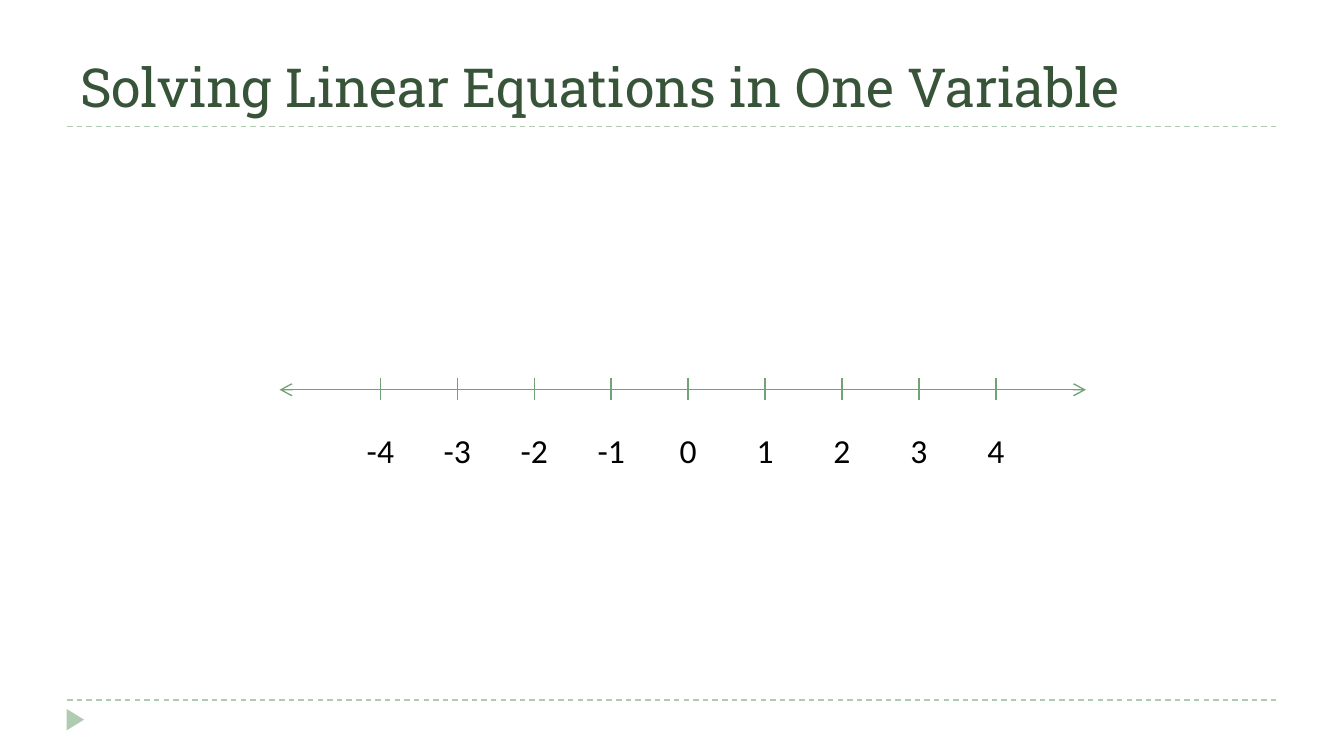
import dataclasses

import lxml.etree
import pptx
import pptx.dml.color
import pptx.enum.dml
import pptx.enum.shapes
import pptx.enum.text
import pptx.oxml.ns
import pptx.slide
import pptx.util

Inches = pptx.util.Inches
ALIGN = pptx.enum.text.PP_ALIGN
ANCHOR = pptx.enum.text.MSO_ANCHOR

COLORS = {"background": "FFFFFF", "rule": "B0CCB0", "title": "375439",
          "axis": "72A376", "label": "000000"}


@dataclasses.dataclass(frozen=True)
class Line:
    start: tuple[float, float]
    end: tuple[float, float]
    color: str
    dashed: bool = False
    arrows: bool = False


@dataclasses.dataclass(frozen=True)
class Label:
    text: str
    box: tuple[float, float, float, float]
    font: str
    size: float
    color: str
    align: ALIGN = ALIGN.CENTER
    anchor: ANCHOR = ANCHOR.TOP


def rgb(name: str) -> pptx.dml.color.RGBColor:
    return pptx.dml.color.RGBColor.from_string(COLORS[name])


def draw_line(slide: pptx.slide.Slide, line: Line) -> None:
    connector = slide.shapes.add_connector(
        pptx.enum.shapes.MSO_CONNECTOR.STRAIGHT,
        *(Inches(value) for value in line.start + line.end))
    connector.line.color.rgb = rgb(line.color)
    connector.line.width = pptx.util.Pt(0.75)
    if line.dashed:
        connector.line.dash_style = pptx.enum.dml.MSO_LINE.DASH
    qn = pptx.oxml.ns.qn
    properties = connector._element.spPr
    if line.arrows:
        for end in ("a:headEnd", "a:tailEnd"):
            lxml.etree.SubElement(properties.find(qn("a:ln")), qn(end), type="arrow")
    lxml.etree.SubElement(properties, qn("a:effectLst"))


def draw_label(slide: pptx.slide.Slide, label: Label) -> None:
    frame = slide.shapes.add_textbox(*(Inches(value) for value in label.box)).text_frame
    frame.word_wrap = True
    frame.vertical_anchor = label.anchor
    paragraph = frame.paragraphs[0]
    paragraph.alignment = label.align
    run = paragraph.add_run()
    run.text = label.text
    run.font.name = label.font
    run.font.size = pptx.util.Pt(label.size)
    run.font.color.rgb = rgb(label.color)


def draw_marker(slide: pptx.slide.Slide) -> None:
    marker = slide.shapes.add_shape(
        pptx.enum.shapes.MSO_SHAPE.ISOSCELES_TRIANGLE,
        Inches(0.48), Inches(5.29), Inches(0.16), Inches(0.13))
    marker.rotation = 90
    marker.shadow.inherit = False
    marker.fill.solid()
    marker.fill.fore_color.rgb = rgb("rule")
    marker.line.fill.background()


def draw_number_line(slide: pptx.slide.Slide) -> None:
    first, last = 2.83, 7.41
    numbers = range(-4, 5)
    step = (last - first) / (len(numbers) - 1)
    draw_line(slide, Line((2.08, 2.9), (8.08, 2.9), "axis", arrows=True))
    for index, number in enumerate(numbers):
        x = first + index * step
        draw_line(slide, Line((x, 2.81), (x, 2.98), "axis"))
        width = 0.42 if number < 0 else 0.33
        draw_label(slide, Label(str(number), (x - width / 2, 3.15, width, 0.4),
                                "Calibri", 18, "label"))


def main() -> None:
    presentation = pptx.Presentation()
    presentation.slide_width = Inches(10)
    presentation.slide_height = Inches(10 * 9 / 16)
    slide = presentation.slides.add_slide(presentation.slide_layouts[6])
    slide.background.fill.solid()
    slide.background.fill.fore_color.rgb = rgb("background")
    for y in (5.21, 0.94):
        draw_line(slide, Line((0.5, y), (9.5, y), "rule", dashed=True))
    draw_marker(slide)
    draw_label(slide, Label("Solving Linear Equations in One Variable",
                            (0.5, 0.12, 9, 0.81), "Roboto Slab", 28.8, "title",
                            ALIGN.LEFT, ANCHOR.BOTTOM))
    draw_number_line(slide)
    presentation.save("out.pptx")


if __name__ == "__main__":
    main()
